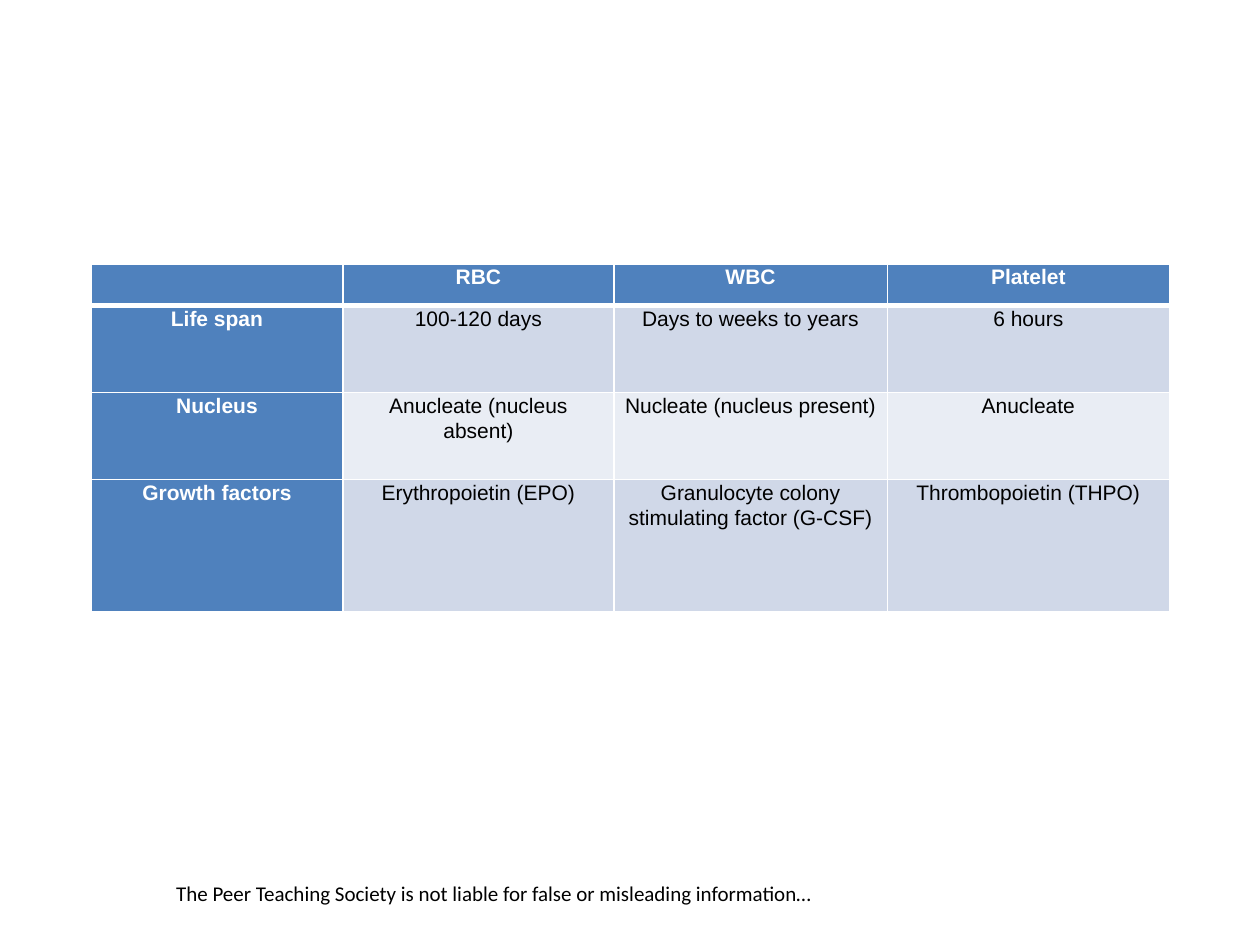
from lxml import etree
from pptx import Presentation
from pptx.dml.color import RGBColor
from pptx.enum.text import PP_ALIGN
from pptx.oxml.ns import qn
from pptx.util import Pt

CENTER = PP_ALIGN.CENTER
BLUE, WHITE, BLACK = "4F81BD", "FFFFFF", "000000"
BANDS = ("D0D8E8", "E9EDF4")
COLUMN_WIDTHS = (144, 154.8, 156.24, 161.28)
ROW_HEIGHTS = (23.76, 49.68, 49.68, 75.6)
BLOOD_CELLS = (
    ("", "RBC", "WBC", "Platelet"),
    ("Life span", "100-120 days", "Days to weeks to years", "6 hours"),
    ("Nucleus", "Anucleate (nucleus absent)", "Nucleate (nucleus present)", "Anucleate"),
    ("Growth factors", "Erythropoietin (EPO)",
     "Granulocyte colony stimulating factor (G-CSF)", "Thrombopoietin (THPO)"),
)


def color(value):
    return RGBColor.from_string(value)


class SlideBuilder:
    """Holds the text style and the current slide."""

    def __init__(self, slide, size=12):
        self.slide = slide
        self.size = size

    def format_font(self, paragraph, name, fill, bold=False):
        font = paragraph.font
        font.name, font.size, font.bold = name, Pt(self.size), bold
        font.color.rgb = color(fill)

    def text(self, left, top, width, height, content):
        shape = self.slide.shapes.add_textbox(Pt(left), Pt(top), Pt(width), Pt(height))
        shape.text_frame.word_wrap = True
        paragraph = shape.text_frame.paragraphs[0]
        paragraph.text = content
        self.format_font(paragraph, "Calibri", BLACK)

    def border(self, cell, side, width):
        properties = cell._tc.get_or_add_tcPr()
        line = etree.SubElement(properties, qn(f"a:ln{side}"), w=str(Pt(width)))
        fill = etree.SubElement(line, qn("a:solidFill"))
        etree.SubElement(fill, qn("a:srgbClr"), val=WHITE)

    def cell(self, cell, content, row, column):
        heading = row == 0 or column == 0
        widths = {"L": 1, "R": 1, "T": 3 if row == 1 else 1, "B": 3 if row == 0 else 1}
        for side, width in widths.items():
            self.border(cell, side, width)
        cell.fill.solid()
        cell.fill.fore_color.rgb = color(BLUE if heading else BANDS[(row - 1) % 2])
        cell.margin_left = cell.margin_right = Pt(5)
        cell.margin_top = cell.margin_bottom = 0
        paragraph = cell.text_frame.paragraphs[0]
        paragraph.text = content
        paragraph.alignment = CENTER
        paragraph.line_spacing = 1.07
        paragraph.space_after = Pt(8)
        self.format_font(paragraph, "Arial", WHITE if heading else BLACK, heading)

    def table(self, left, top, widths, heights, rows):
        table = self.slide.shapes.add_table(
            len(rows), len(widths), Pt(left), Pt(top), Pt(sum(widths)), Pt(sum(heights))).table
        for column, width in zip(table.columns, widths):
            column.width = Pt(width)
        for row, height in zip(table.rows, heights):
            row.height = Pt(height)
        for row, contents in enumerate(rows):
            for column, content in enumerate(contents):
                self.cell(table.cell(row, column), content, row, column)


def main():
    presentation = Presentation()
    presentation.slide_width, presentation.slide_height = Pt(720), Pt(540)
    builder = SlideBuilder(presentation.slides.add_slide(presentation.slide_layouts[6]))
    builder.text(93.6, 499.68, 398.88, 21.6,
                 "The Peer Teaching Society is not liable for false or misleading information…")
    builder.table(52, 150.8, COLUMN_WIDTHS, ROW_HEIGHTS, BLOOD_CELLS)
    presentation.save("out.pptx")


if __name__ == "__main__":
    main()
